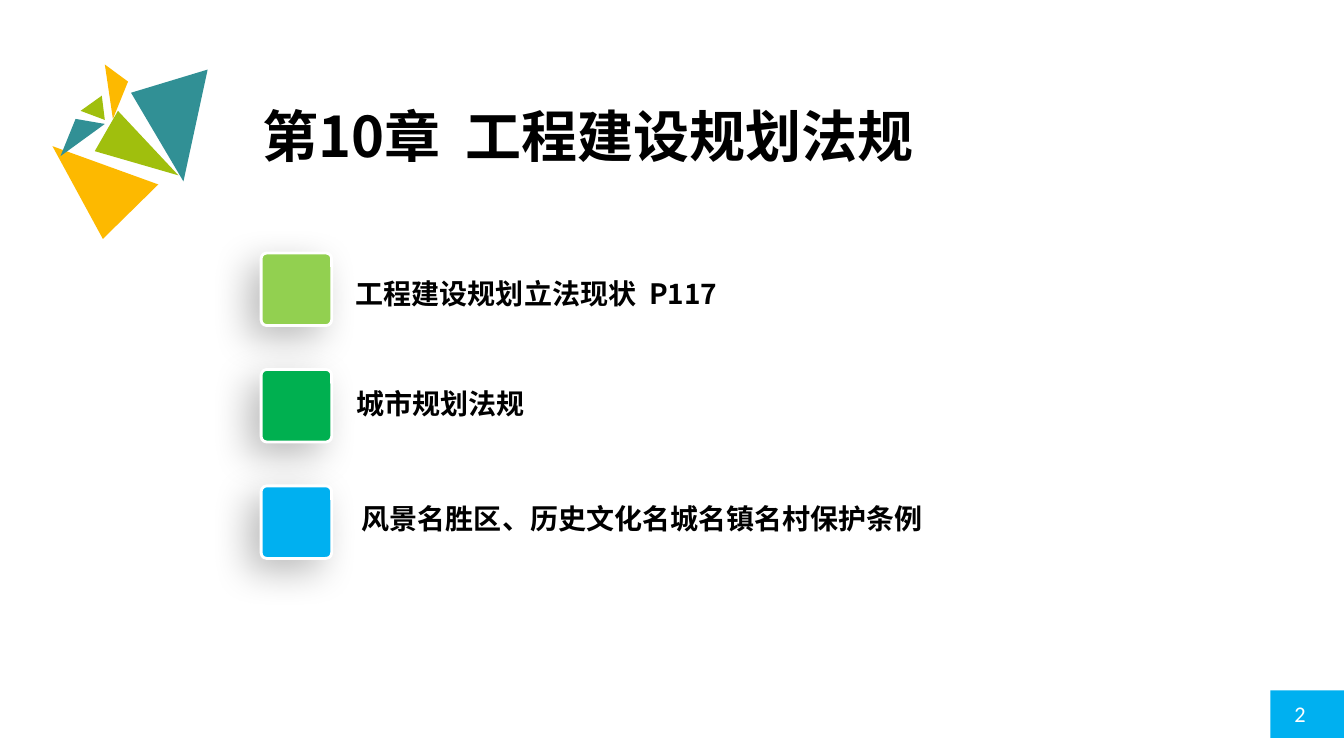
from dataclasses import dataclass

from lxml import etree
from pptx import Presentation
from pptx.dml.color import RGBColor
from pptx.enum.shapes import MSO_SHAPE as Shape
from pptx.enum.text import MSO_ANCHOR as Anchor, MSO_AUTO_SIZE as AutoSize, PP_ALIGN as Align
from pptx.oxml.ns import qn
from pptx.util import Inches, Pt


@dataclass(frozen=True)
class Theme:
    heading_font: str = "Noto Sans CJK SC"
    number_font: str = "Calibri"
    title_size: int = 40
    topic_size: int = 20
    number_size: int = 16
    black: str = "000000"
    white: str = "FFFFFF"
    teal: str = "319095"
    olive: str = "A0BF0D"
    amber: str = "FDB900"
    lime: str = "92D050"
    green: str = "00B050"
    blue: str = "00B0F0"


THEME = Theme()

# Triangles of the ornament: colour and corners relative to its box
ORNAMENT = [
    (THEME.teal, [(1.54, 0.05), (1.3, 1.16), (0.78, 0.28)]),
    (THEME.olive, [(0.65, 0.46), (1.25, 1.1), (0.42, 0.86)]),
    (THEME.amber, [(0, 0.81), (1.05, 1.19), (0.5, 1.73)]),
    (THEME.teal, [(0.08, 0.91), (0.52, 0.59), (0.23, 0.54)]),
    (THEME.olive, [(0.49, 0.31), (0.52, 0.55), (0.28, 0.46)]),
    (THEME.amber, [(0.52, 0), (0.75, 0.17), (0.6, 0.54)]),
]

# Topics: marker colour, wording, text offset from the marker, height, line spacing
TOPICS = [
    (THEME.lime, "工程建设规划立法现状  P117", (0.84, -0.08), 0.81, 1.79),
    (THEME.green, "城市规划法规", (0.85, 0.02), 0.6, 1.3),
    (THEME.blue, "风景名胜区、历史文化名城名镇名村保护条例", (0.9, -0.16), 0.81, 1.79),
]


def paint(shape, fill, line=None, width=2):
    shape.shadow.inherit = False
    shape.fill.solid()
    shape.fill.fore_color.rgb = RGBColor.from_string(fill)
    if line:
        shape.line.color.rgb = RGBColor.from_string(line)
        shape.line.width = Pt(width)
    else:
        shape.line.fill.background()


def cast_shadow(shape, blur=27, distance=12, angle=135, opacity=26):
    effects = shape._element.spPr.find(qn("a:effectLst"))
    shadow = etree.SubElement(
        effects, qn("a:outerShdw"), blurRad=str(Pt(blur)), dist=str(Pt(distance)),
        dir=str(angle * 60000), algn="tr", rotWithShape="0")
    color = etree.SubElement(shadow, qn("a:srgbClr"), val=THEME.black)
    etree.SubElement(color, qn("a:alpha"), val=str(opacity * 1000))


def write(holder, text, *, size, font=THEME.heading_font, color=THEME.black,
          bold=True, spacing=1.0, wrap=True):
    frame = holder.text_frame
    frame.word_wrap = wrap
    frame.auto_size = AutoSize.NONE
    frame.vertical_anchor = Anchor.TOP
    paragraph = frame.paragraphs[0]
    paragraph.alignment = Align.LEFT
    paragraph.line_spacing = spacing
    run = paragraph.add_run()
    run.text = text
    run.font.size = Pt(size)
    run.font.bold = bold
    run.font.name = font
    run.font.color.rgb = RGBColor.from_string(color)
    etree.SubElement(run._r.get_or_add_rPr(), qn("a:ea"), typeface=font)


def add_ornament(slide, left, top):
    for color, corners in ORNAMENT:
        points = [(Inches(left + x), Inches(top + y)) for x, y in corners]
        builder = slide.shapes.build_freeform(*points[0])
        builder.add_line_segments(points[1:], close=True)
        paint(builder.convert_to_shape(), color)


def add_title(slide, left, top, width, height):
    title = slide.shapes.title
    title.left, title.top = Inches(left), Inches(top)
    title.width, title.height = Inches(width), Inches(height)
    write(title, "第10章  工程建设规划法规", size=THEME.title_size, spacing=0.9)


def add_topics(slide, left, top, pitch, text_width=6.67):
    for index, (color, wording, (dx, dy), height, spacing) in enumerate(TOPICS):
        row_top = top + index * pitch
        marker = slide.shapes.add_shape(
            Shape.ROUNDED_RECTANGLE, Inches(left), Inches(row_top), Inches(0.7), Inches(0.72))
        marker.adjustments[0] = 0.08
        paint(marker, color, line=THEME.white)
        cast_shadow(marker)
        topic = slide.shapes.add_textbox(
            Inches(left + dx), Inches(row_top + dy), Inches(text_width), Inches(height))
        write(topic, wording, size=THEME.topic_size, spacing=spacing)


def add_page_number(slide, left, top, width, height):
    tab = slide.shapes.add_shape(
        Shape.RECTANGLE, Inches(left), Inches(top), Inches(width), Inches(height))
    paint(tab, THEME.blue)
    number = slide.shapes.add_textbox(
        Inches(left + 0.14), Inches(top + 0.05), Inches(0.46), Inches(0.37))
    write(number, "2", size=THEME.number_size, font=THEME.number_font,
          color=THEME.white, bold=False, wrap=False)


def main():
    deck = Presentation()
    deck.slide_width, deck.slide_height = Inches(13.33), Inches(7.5)
    slide = deck.slides.add_slide(deck.slide_layouts[5])
    add_page_number(slide, 12.6, 6.85, 0.74, 0.47)
    add_ornament(slide, 0.52, 0.64)
    add_title(slide, 2.5, 1.03, 9.34, 0.96)
    add_topics(slide, 2.59, 2.51, pitch=1.155)
    deck.save("out.pptx")


if __name__ == "__main__":
    main()
